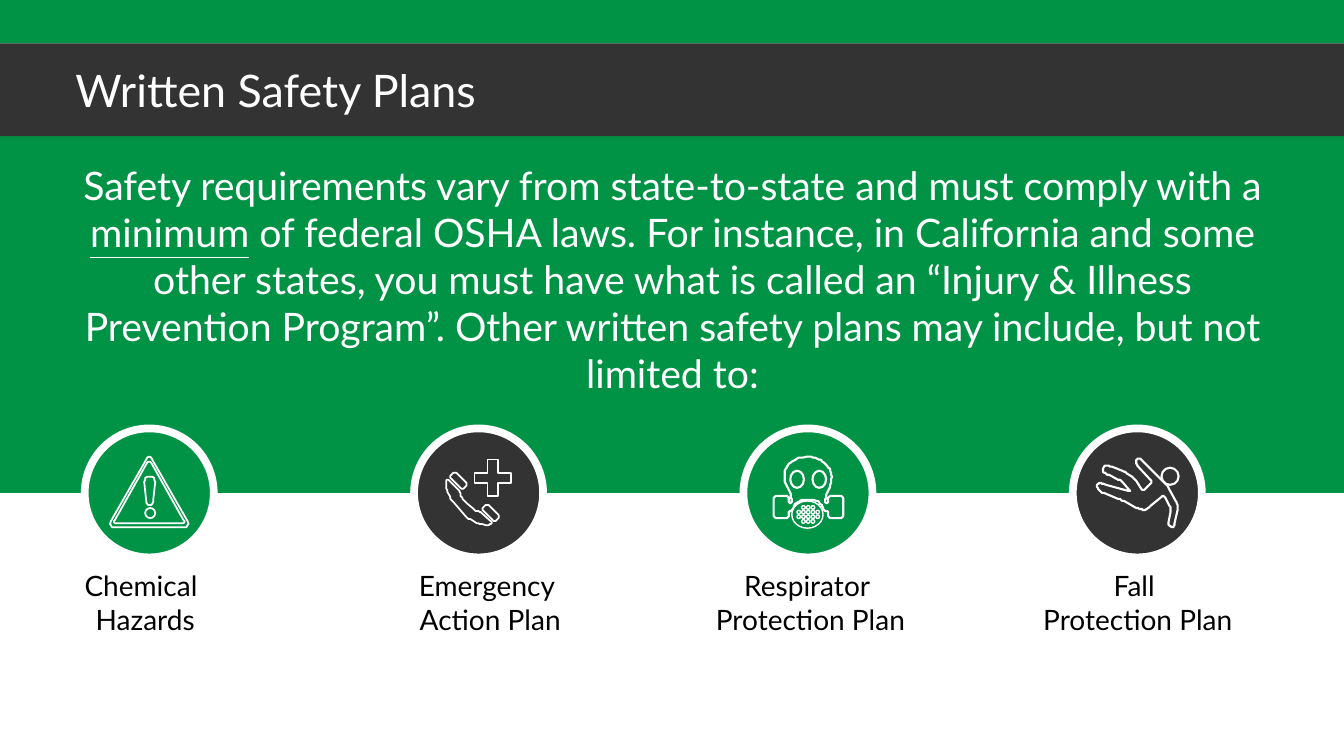
from pptx import Presentation
from pptx.dml.color import RGBColor
from pptx.enum.shapes import MSO_SHAPE as Shape
from pptx.enum.text import PP_ALIGN as Align
from pptx.util import Inches, Pt

GREEN, DARK, WHITE, BLACK = "009345", "333333", "FFFFFF", "000000"
DISC_SIZE = 1.28
DISC_TOP = 4.25
DISC_LEFT = 0.84
DISC_STEP = 9.8 / 3
UNIT = Inches(0.01)


def color(value):
    return RGBColor.from_string(value)


def style(shape, fill=None, line=None, width=1.25):
    shape.shadow.inherit = False
    if fill:
        shape.fill.solid()
        shape.fill.fore_color.rgb = color(fill)
    else:
        shape.fill.background()
    if line:
        shape.line.color.rgb = color(line)
        shape.line.width = Pt(width)
    else:
        shape.line.fill.background()


def add_preset(slide, kind, box, fill=None, line=None, width=1.25):
    shape = slide.shapes.add_shape(kind, *map(Inches, box))
    style(shape, fill, line, width)


def add_text(slide, box, paragraphs, size, text_color):
    frame = slide.shapes.add_textbox(*map(Inches, box)).text_frame
    frame.word_wrap = True
    for index, (alignment, runs) in enumerate(paragraphs):
        paragraph = frame.paragraphs[0] if index == 0 else frame.add_paragraph()
        paragraph.alignment = alignment
        for text, underlined in runs:
            run = paragraph.add_run()
            run.text = text
            run.font.name = "Lato"
            run.font.size = Pt(size)
            run.font.color.rgb = color(text_color)
            if underlined:
                run.font.underline = True


def toward(start, end, radius):
    dx, dy = end[0] - start[0], end[1] - start[1]
    length = (dx * dx + dy * dy) ** 0.5
    share = min(radius / length, 0.5)
    return start[0] + dx * share, start[1] + dy * share


def rounded(corners, radius):
    if not radius:
        return corners
    points = []
    for index, corner in enumerate(corners):
        before = toward(corner, corners[index - 1], radius)
        after = toward(corner, corners[(index + 1) % len(corners)], radius)
        for step in range(5):
            t = step / 4
            points.append(tuple(
                (1 - t) ** 2 * a + 2 * t * (1 - t) * b + t * t * c
                for a, b, c in zip(before, corner, after)))
    return points


def add_outline(slide, origin, corners, radius=0, width=1.25):
    points = rounded(corners, radius)
    builder = slide.shapes.build_freeform(*points[0], scale=UNIT)
    builder.add_line_segments(points[1:], close=True)
    style(builder.convert_to_shape(*map(Inches, origin)), None, WHITE, width)


def add_ring(slide, origin, box, width=1.25):
    left, top, wide, high = (value / 100 for value in box)
    place = (origin[0] + left, origin[1] + top, wide, high)
    add_preset(slide, Shape.OVAL, place, None, WHITE, width)


def draw_warning(slide, origin):
    add_outline(slide, origin, [(64, 25), (105, 98), (23, 98)], 7)
    add_outline(slide, origin, [(64, 31), (100, 94), (28, 94)], 4)
    add_outline(slide, origin, [(59, 48), (70, 48), (68, 76), (61, 76)], 5)
    add_ring(slide, origin, (60, 79, 10, 10))


def draw_emergency_call(slide, origin):
    cross = [(73, 31), (83, 31), (83, 44), (96, 44), (96, 54), (83, 54),
             (83, 67), (73, 67), (73, 54), (60, 54), (60, 44), (73, 44)]
    handle = [(33, 50), (46, 63), (46, 67), (50, 72), (60, 81), (62, 82), (65, 82),
              (78, 94), (74, 96), (65, 95), (53, 89), (37, 71), (32, 60), (32, 52)]
    earpiece = [(35, 48), (39, 44), (42, 44), (52, 54), (52, 57), (48, 61)]
    add_outline(slide, origin, cross)
    add_outline(slide, origin, handle, 3)
    add_outline(slide, origin, earpiece, 2)
    add_outline(slide, origin, [(x + 32, y + 32) for x, y in earpiece], 2)


def draw_respirator(slide, origin):
    mask = [(81, 74), (84, 74), (84, 67), (99, 67), (99, 89), (84, 89), (84, 82),
            (80, 82), (77, 74), (70, 71), (58, 71), (51, 75), (48, 82), (45, 82),
            (45, 89), (30, 89), (30, 67), (45, 67), (45, 74), (48, 74), (47, 65),
            (41, 53), (41, 42), (45, 35), (55, 29), (67, 28), (77, 31), (86, 40),
            (88, 48), (86, 58), (82, 66)]
    add_outline(slide, origin, mask, 4, 1.5)
    for eye_left in (46.5, 68.5):
        add_ring(slide, origin, (eye_left, 42, 13.5, 17), 1.5)
    add_ring(slide, origin, (48, 72, 31, 27), 1)
    for row, reach in enumerate((1, 2, 2, 1)):
        for column in range(-reach, reach + 1):
            hole = (62.5 + 4.7 * column, 76.7 + 4.6 * row, 3.5, 3.5)
            add_ring(slide, origin, hole, 1)


def draw_falling_person(slide, origin):
    body = [(88, 51), (93, 56), (103, 73), (104, 78), (101, 97), (98, 98), (95, 96),
            (97, 80), (97, 78), (90, 66), (75, 79), (72, 81), (66, 80), (48, 71),
            (28, 63), (24, 59), (25, 54), (30, 55), (58, 63), (48, 52), (33, 45),
            (29, 42), (31, 37), (36, 37), (52, 43), (61, 50), (70, 62), (79, 53),
            (63, 36), (63, 31), (66, 29)]
    add_outline(slide, origin, body, 3, 1.5)
    add_ring(slide, origin, (88, 39, 17, 17), 1.5)


def add_bands(slide):
    add_preset(slide, Shape.RECTANGLE, (0, 1.33, 13.33, 3.56), GREEN)
    add_preset(slide, Shape.RECTANGLE, (0, 0, 13.33, 0.43), GREEN)
    add_preset(slide, Shape.RECTANGLE, (0, 0.43, 13.33, 0.92), DARK)


def add_heading(slide, box):
    add_text(slide, box, [(Align.LEFT, [("Written Safety Plans", False)])], 32, WHITE)


def add_introduction(slide, box):
    runs = [
        ("Safety requirements vary from state-to-state and must comply with a ", False),
        ("minimum", True),
        (" of federal OSHA laws. For instance, in California and some other states, "
         "you must have what is called an “Injury & Illness Prevention Program”. "
         "Other written safety plans may include, but not limited to:", False),
    ]
    add_text(slide, box, [(Align.CENTER, runs)], 28, WHITE)


def add_plan(slide, left, top, plan):
    fill, draw_icon, lines, first_alignment, label_shift, label_width = plan
    disc = (left, top, DISC_SIZE, DISC_SIZE)
    add_preset(slide, Shape.OVAL, disc, fill, WHITE, 5.5)
    draw_icon(slide, (left, top))
    alignments = (first_alignment, Align.CENTER)
    paragraphs = [(side, [(line, False)]) for side, line in zip(alignments, lines)]
    label = (left + label_shift, top + 1.34, label_width, 0.77)
    add_text(slide, label, paragraphs, 20, BLACK)


def main():
    presentation = Presentation()
    presentation.slide_width = Inches(13.33)
    presentation.slide_height = Inches(7.5)
    slide = presentation.slides.add_slide(presentation.slide_layouts[6])
    add_bands(slide)
    add_heading(slide, (0.65, 0.57, 11.6, 0.64))
    add_introduction(slide, (0.58, 1.55, 12.18, 2.46))
    plans = [
        (GREEN, draw_warning, ("Chemical", "Hazards"), Align.LEFT, -0.1, 1.4),
        (DARK, draw_emergency_call, ("Emergency ", "Action Plan"),
         Align.CENTER, -0.12, 1.75),
        (GREEN, draw_respirator, ("Respirator ", "Protection Plan"),
         Align.CENTER, -0.94, 3.21),
        (DARK, draw_falling_person, ("Fall ", "Protection Plan"),
         Align.CENTER, -0.46, 2.21),
    ]
    for index, plan in enumerate(plans):
        add_plan(slide, DISC_LEFT + index * DISC_STEP, DISC_TOP, plan)
    presentation.save("out.pptx")


if __name__ == "__main__":
    main()
